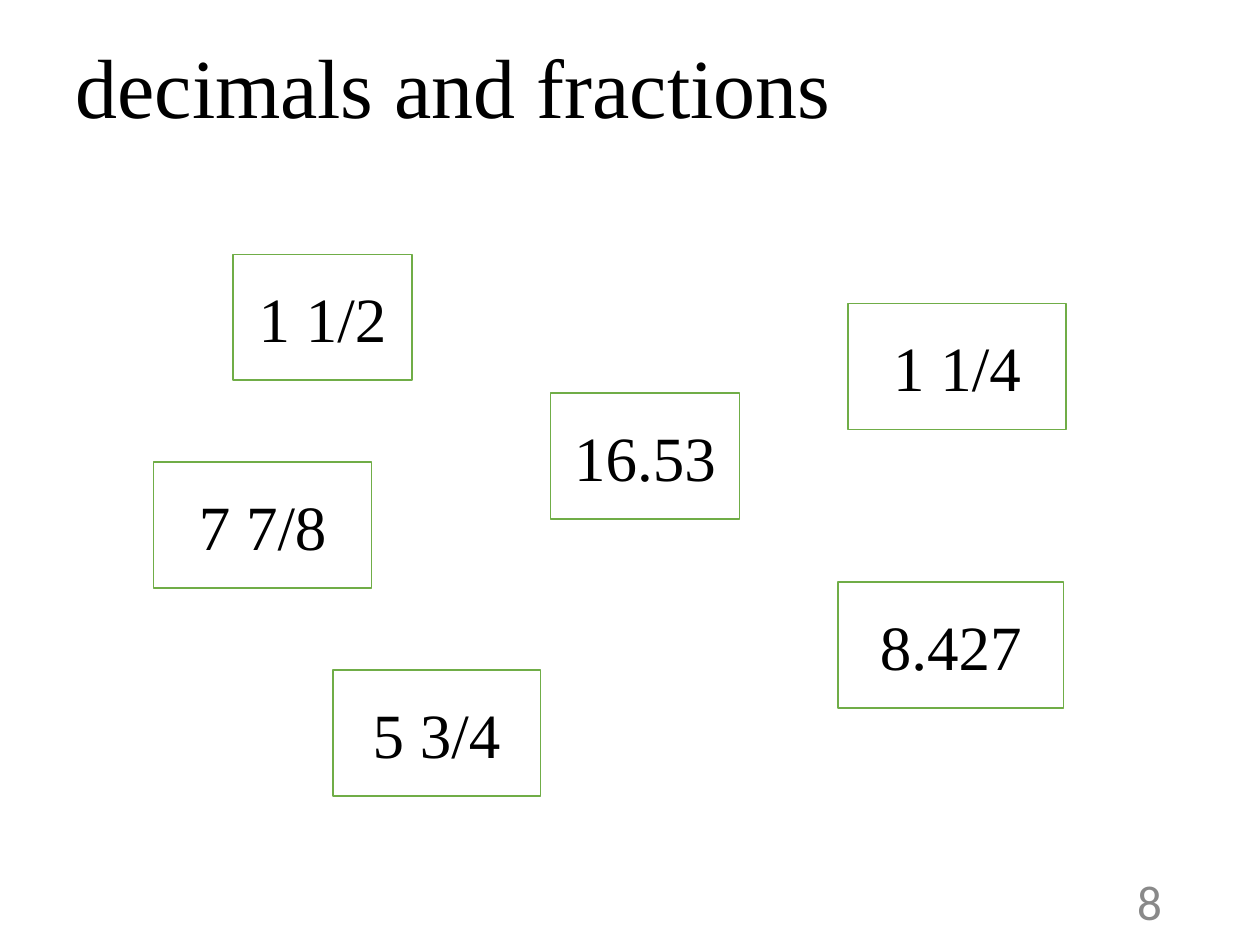
import pptx
import pptx.util
import pptx.dml.color
import pptx.enum.shapes
import pptx.enum.text

Pt = pptx.util.Pt
RGBColor = pptx.dml.color.RGBColor
Align = pptx.enum.text.PP_ALIGN
Anchor = pptx.enum.text.MSO_ANCHOR

BLACK = RGBColor(0x00, 0x00, 0x00)
WHITE = RGBColor(0xFF, 0xFF, 0xFF)
GREEN = RGBColor(0x70, 0xAD, 0x47)
GREY = RGBColor(0x89, 0x89, 0x89)
SERIF = "Times New Roman"
SANS = "Calibri"

CARD_HIGH = 72
# Number, left, top, width
CARDS = [
    ("1 1/2", 133.2, 145.4, 102.2),
    ("1 1/4", 484.6, 173.5, 124.6),
    ("5 3/4", 190.1, 383, 118.8),
    ("16.53", 314.6, 224.6, 108),
    ("8.427", 478.8, 332.6, 128.9),
    ("7 7/8", 87.8, 264.2, 124.6),
]


def set_text(shape, text, size, font, color, align):
    frame = shape.text_frame
    frame.text = text
    frame.word_wrap = True
    frame.auto_size = pptx.enum.text.MSO_AUTO_SIZE.NONE
    frame.vertical_anchor = Anchor.MIDDLE
    par = frame.paragraphs[0]
    par.alignment = align
    run = par.runs[0]
    run.font.size = Pt(size)
    run.font.name = font
    run.font.color.rgb = color
    return par


def add_title(slide, text):
    title = slide.shapes.title
    title.left, title.top = Pt(36), Pt(21.6)
    title.width, title.height = Pt(648), Pt(61.2)
    par = set_text(title, text, 48, SERIF, BLACK, Align.LEFT)
    par.line_spacing = 0.9


def add_page(slide, text):
    box = slide.shapes.add_textbox(Pt(509), Pt(500.4), Pt(162), Pt(28.8))
    set_text(box, text, 28, SANS, GREY, Align.RIGHT)


def add_card(slide, text, left, top, width):
    card = slide.shapes.add_shape(
        pptx.enum.shapes.MSO_SHAPE.RECTANGLE,
        Pt(left), Pt(top), Pt(width), Pt(CARD_HIGH))
    card.shadow.inherit = False
    card.fill.solid()
    card.fill.fore_color.rgb = WHITE
    card.line.color.rgb = GREEN
    card.line.width = Pt(1)
    set_text(card, text, 36, SERIF, BLACK, Align.CENTER)


def main():
    deck = pptx.Presentation()
    deck.slide_width, deck.slide_height = Pt(720), Pt(540)
    slide = deck.slides.add_slide(deck.slide_layouts[5])

    # Heading and page number
    add_title(slide, "decimals and fractions")
    add_page(slide, "8")

    # Scattered number cards
    for card in CARDS:
        add_card(slide, *card)

    deck.save("out.pptx")


if __name__ == "__main__":
    main()
